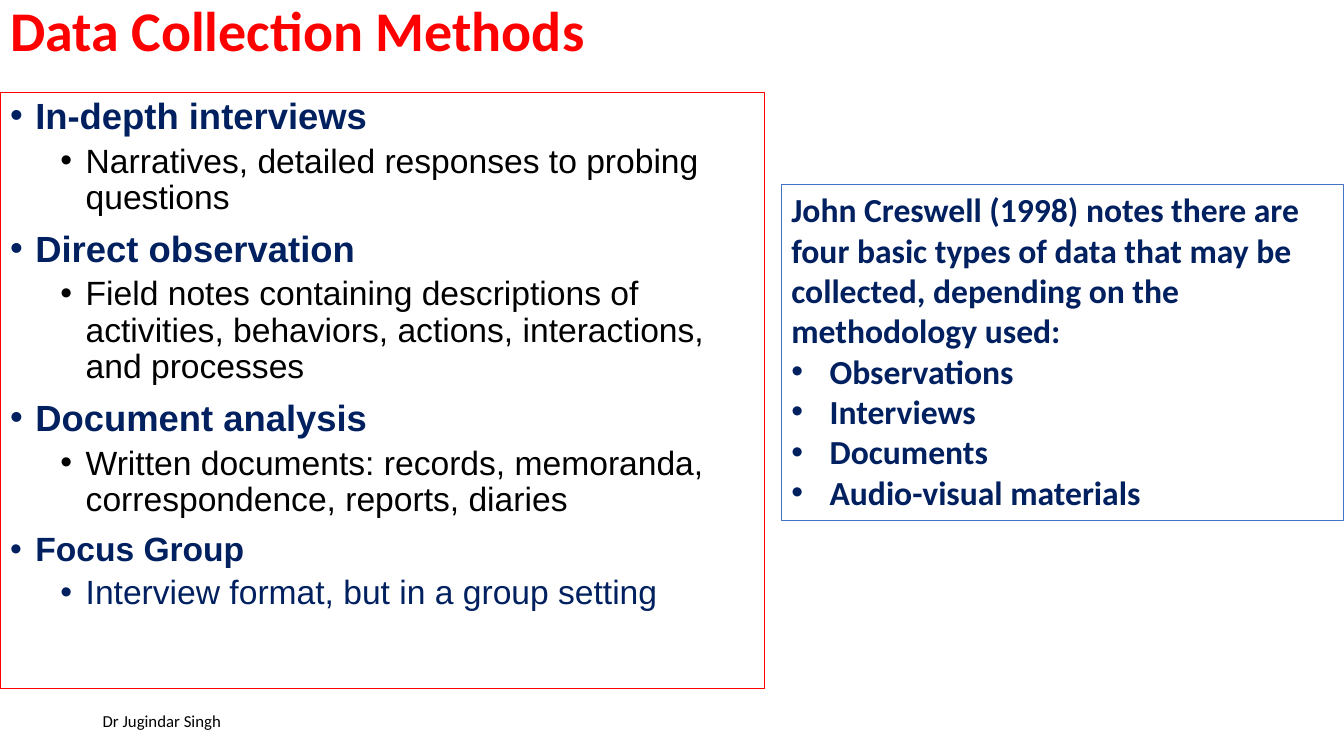
from dataclasses import dataclass

from lxml.etree import SubElement
from pptx import Presentation
from pptx.dml.color import RGBColor
from pptx.enum.text import MSO_ANCHOR, MSO_AUTO_SIZE, PP_ALIGN
from pptx.oxml.ns import qn
from pptx.util import Inches, Pt


@dataclass(frozen=True)
class Theme:
    red: str = "FF0000"
    navy: str = "002060"
    blue: str = "4472C4"
    black: str = "000000"
    heading_font: str = "Calibri"
    list_font: str = "Arial"
    title_size: int = 40
    topic_size: int = 26
    text_size: int = 24
    footer_size: int = 12
    border: float = 0.75


class SlideBuilder:
    def __init__(self, deck, theme):
        self.theme = theme
        self.page = deck.slides.add_slide(deck.slide_layouts[1])

    def place(self, box, area, anchor):
        sides = ("left", "top", "width", "height")
        for name, value in zip(sides, area):
            setattr(box, name, Inches(value))
        frame_format = {
            "word_wrap": True,
            "auto_size": MSO_AUTO_SIZE.NONE,
            "vertical_anchor": anchor,
        }
        for name, value in frame_format.items():
            setattr(box.text_frame, name, value)

    def outline(self, box, color):
        box.line.color.rgb = RGBColor.from_string(color)
        box.line.width = Pt(self.theme.border)

    def add_text(self, para, text, size, color, font, bold=False, **layout):
        para_format = {"alignment": PP_ALIGN.LEFT, "space_before": Pt(0), **layout}
        for name, value in para_format.items():
            setattr(para, name, value)
        span = para.add_run()
        span.text = text
        for name, value in {"name": font, "size": Pt(size), "bold": bold}.items():
            setattr(span.font, name, value)
        span.font.color.rgb = RGBColor.from_string(color)

    def bullet(self, para, margin, hanging):
        properties = para._p.get_or_add_pPr()
        properties.set("marL", str(Inches(margin)))
        properties.set("indent", str(-Inches(hanging)))
        SubElement(properties, qn("a:buFont")).set("typeface", "Arial")
        SubElement(properties, qn("a:buChar")).set("char", "•")

    def next_para(self, frame, index):
        return frame.add_paragraph() if index else frame.paragraphs[0]

    def title(self, text, area):
        theme = self.theme
        box = self.page.shapes.title
        self.place(box, area, MSO_ANCHOR.MIDDLE)
        self.add_text(box.text_frame.paragraphs[0], text, theme.title_size,
                      theme.red, theme.heading_font, True, line_spacing=0.9)

    def topic_list(self, topics, area):
        theme = self.theme
        box = self.page.placeholders[1]
        self.place(box, area, MSO_ANCHOR.TOP)
        self.outline(box, theme.red)
        entries = []
        for topic, topic_size, detail, detail_color in topics:
            entries.append((0, topic, topic_size, theme.navy))
            entries.append((1, detail, theme.text_size, detail_color))
        for index, (level, text, size, color) in enumerate(entries):
            para = self.next_para(box.text_frame, index)
            self.add_text(para, text, size, color, theme.list_font, level == 0,
                          level=level, line_spacing=0.9,
                          space_before=Pt(5 if level else 10))
            self.bullet(para, 0.25 + 0.5 * level, 0.25)

    def note(self, intro, items, area):
        theme = self.theme
        box = self.page.shapes.add_textbox(0, 0, 0, 0)
        self.place(box, area, MSO_ANCHOR.TOP)
        self.outline(box, theme.blue)
        for index, text in enumerate([intro, *items]):
            para = self.next_para(box.text_frame, index)
            self.add_text(para, text, theme.text_size, theme.navy,
                          theme.heading_font, True)
            if index:
                self.bullet(para, 0.38, 0.38)

    def footer(self, text, area):
        theme = self.theme
        box = self.page.shapes.add_textbox(0, 0, 0, 0)
        self.place(box, area, MSO_ANCHOR.MIDDLE)
        self.add_text(box.text_frame.paragraphs[0], text, theme.footer_size,
                      theme.black, theme.heading_font)


def main():
    deck = Presentation()
    deck.slide_width = Inches(13.33)
    deck.slide_height = Inches(7.5)
    theme = Theme()
    slide = SlideBuilder(deck, theme)

    slide.title("Data Collection Methods", (0, 0, 11.5, 0.67))
    slide.topic_list([
        ("In-depth interviews", theme.topic_size,
         "Narratives, detailed responses to probing questions", theme.black),
        ("Direct observation", theme.topic_size,
         "Field notes containing descriptions of activities, behaviors, "
         "actions, interactions, and processes", theme.black),
        ("Document analysis", theme.topic_size,
         "Written documents: records, memoranda, correspondence, reports, "
         "diaries", theme.black),
        ("Focus Group", theme.text_size,
         "Interview format, but in a group setting", theme.navy),
    ], (0, 0.92, 7.58, 5.91))
    slide.note(
        "John Creswell (1998) notes there are four basic types of data that "
        "may be collected, depending on the methodology used:",
        ["Observations", "Interviews", "Documents", "Audio-visual materials"],
        (7.75, 1.83, 5.58, 3.33))
    slide.footer("Dr Jugindar Singh", (0.92, 6.95, 3, 0.4))
    deck.save("out.pptx")


if __name__ == "__main__":
    main()
